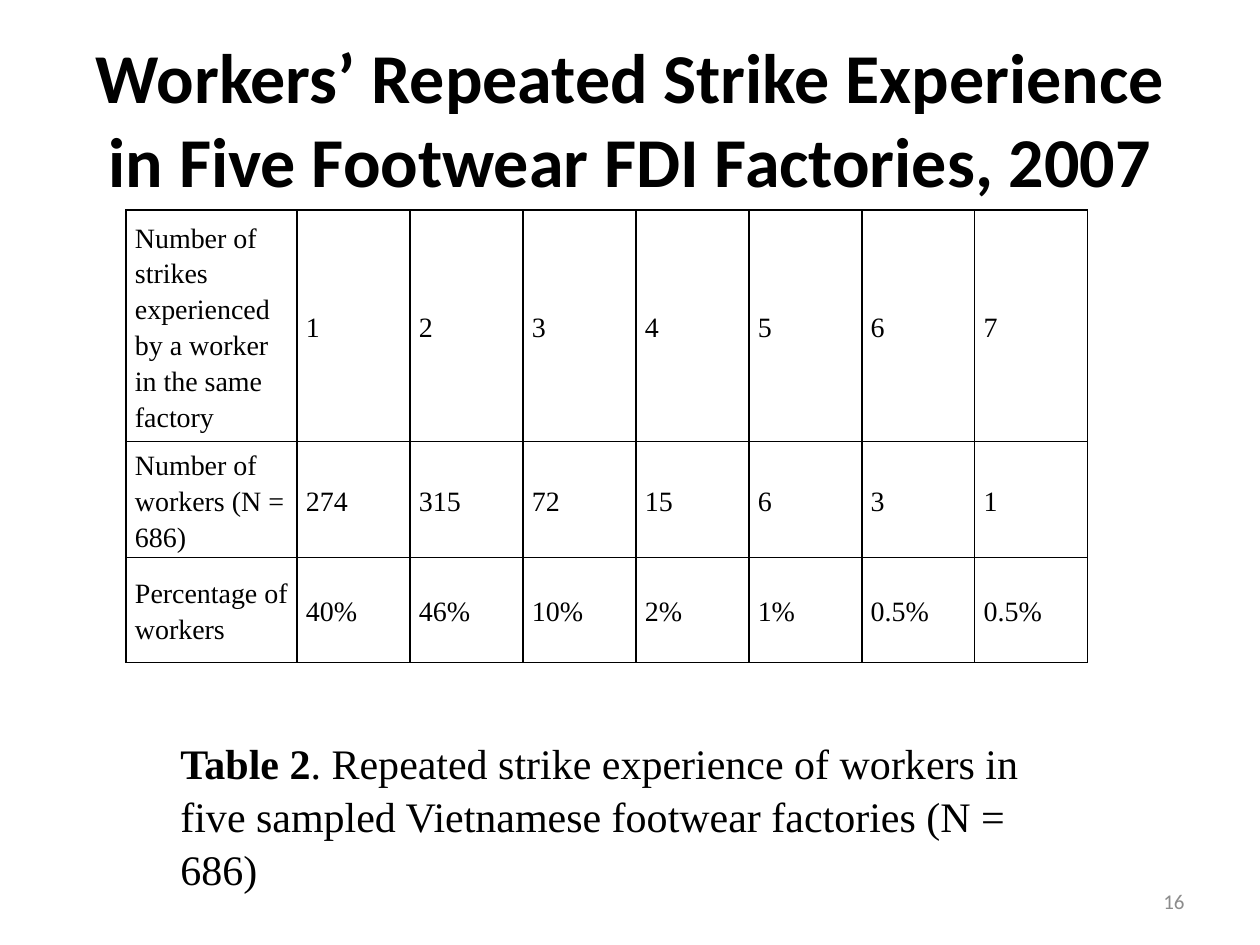
from dataclasses import dataclass

from lxml import etree
from pptx import Presentation
from pptx.dml.color import RGBColor
from pptx.enum.text import MSO_ANCHOR, PP_ALIGN
from pptx.oxml.ns import qn
from pptx.util import Emu, Pt


@dataclass(frozen=True)
class Theme:
    ink: str = "000000"
    muted: str = "8C8C8C"
    sans: str = "Calibri"
    serif: str = "Times New Roman"
    title: int = 40
    caption: int = 24
    cell: int = 16
    number: int = 12


T = Theme()
PX = 914400 / 126


def px(n):
    return Emu(round(n * PX))


def style(p, font, size, color=T.ink, bold=False):
    for r in p.runs:
        r.font.name = font
        r.font.size = Pt(size)
        r.font.bold = bold
        r.font.color.rgb = RGBColor.from_string(color)


prs = Presentation()
prs.slide_width, prs.slide_height = px(1260), px(945)
s = prs.slides.add_slide(prs.slide_layouts[6])

# Title and slide number
for text, box, align, look in [
    ("Workers’ Repeated Strike Experience\vin Five Footwear FDI Factories, 2007",
     (63, 38, 1134, 158), PP_ALIGN.CENTER, (T.sans, T.title, T.ink, True)),
    ("16", (903, 876, 294, 50), PP_ALIGN.RIGHT, (T.sans, T.number, T.muted)),
]:
    tf = s.shapes.add_textbox(*map(px, box)).text_frame
    tf.word_wrap = True
    tf.vertical_anchor = MSO_ANCHOR.MIDDLE
    tf.text = text
    p = tf.paragraphs[0]
    p.alignment = align
    style(p, *look)

# Table
rows = [
    ["Number of strikes experienced by a worker in the same factory",
     "1", "2", "3", "4", "5", "6", "7"],
    ["Number of workers (N = 686)", "274", "315", "72", "15", "6", "3", "1"],
    ["Percentage of workers", "40%", "46%", "10%", "2%", "1%", "0.5%", "0.5%"],
]
widths = [171] + [113] * 7
heights = [212, 105, 105]
table = s.shapes.add_table(len(rows), len(widths), px(126), px(210),
                           px(sum(widths)), px(sum(heights))).table
for col, width in zip(table.columns, widths):
    col.width = px(width)
for row, height in zip(table.rows, heights):
    row.height = px(height)

for i, values in enumerate(rows):
    for j, value in enumerate(values):
        cell = table.cell(i, j)
        cell.text = value
        cell.vertical_anchor = MSO_ANCHOR.MIDDLE
        cell.margin_left = cell.margin_right = px(9)
        cell.margin_top = cell.margin_bottom = 0
        p = cell.text_frame.paragraphs[0]
        p.alignment = PP_ALIGN.JUSTIFY if j else PP_ALIGN.LEFT
        p.line_spacing = 1.15
        p.space_after = Pt(5)
        style(p, T.serif, T.cell)
        tcPr = cell._tc.get_or_add_tcPr()
        for side in ("a:lnL", "a:lnR", "a:lnT", "a:lnB"):
            ln = etree.SubElement(tcPr, qn(side), w=str(Pt(1)))
            fill = etree.SubElement(ln, qn("a:solidFill"))
            etree.SubElement(fill, qn("a:srgbClr"), val=T.ink)
        cell.fill.background()

# Caption
tf = s.shapes.add_textbox(px(168), px(678), px(892), px(217)).text_frame
tf.word_wrap = True
tf.margin_top = px(57)
p = tf.paragraphs[0]
p.line_spacing = 1.05
for text in ("Table 2", ". Repeated strike experience of workers in five sampled "
                        "Vietnamese footwear factories (N = 686)"):
    p.add_run().text = text
style(p, T.serif, T.caption)
p.runs[0].font.bold = True

prs.save("out.pptx")
